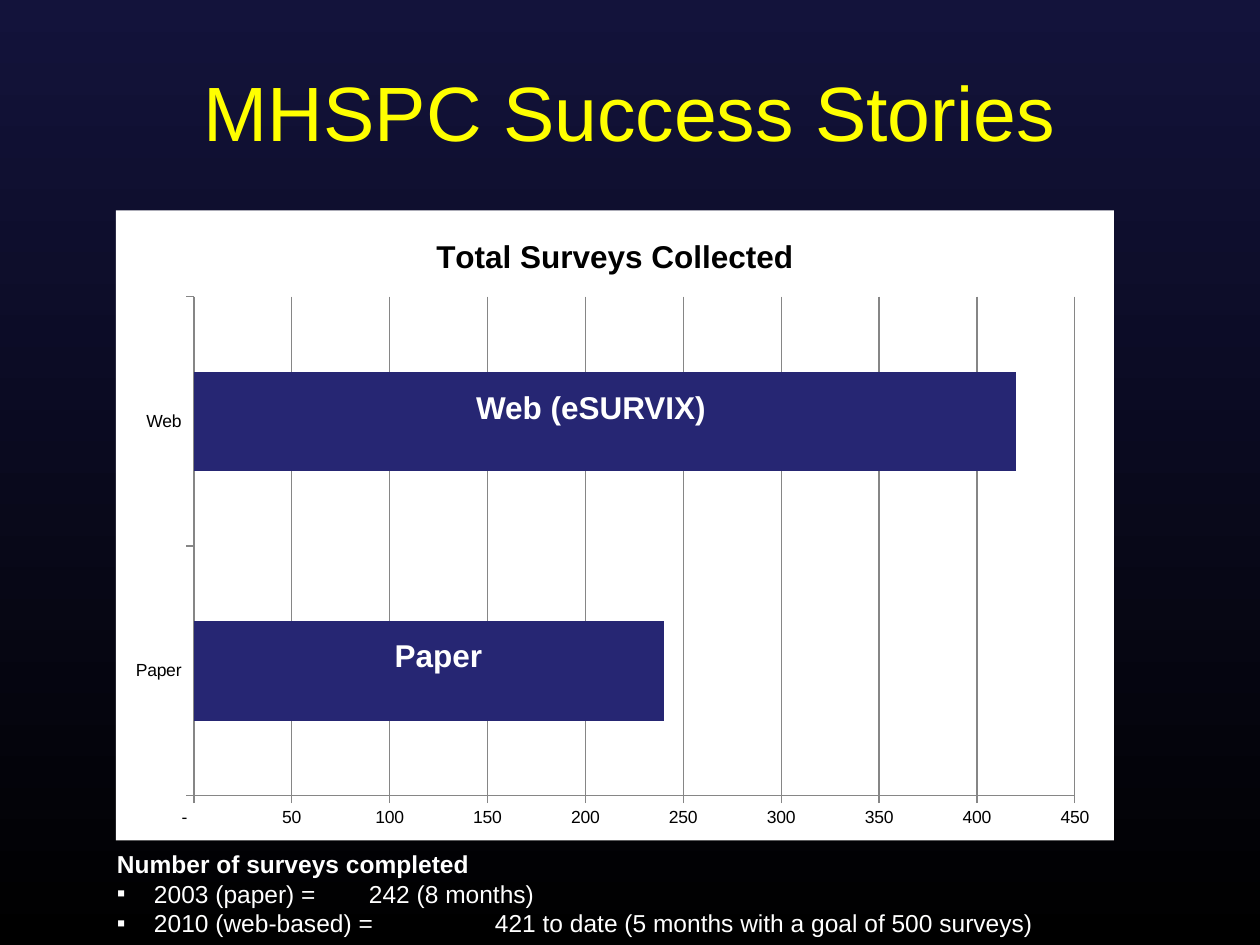
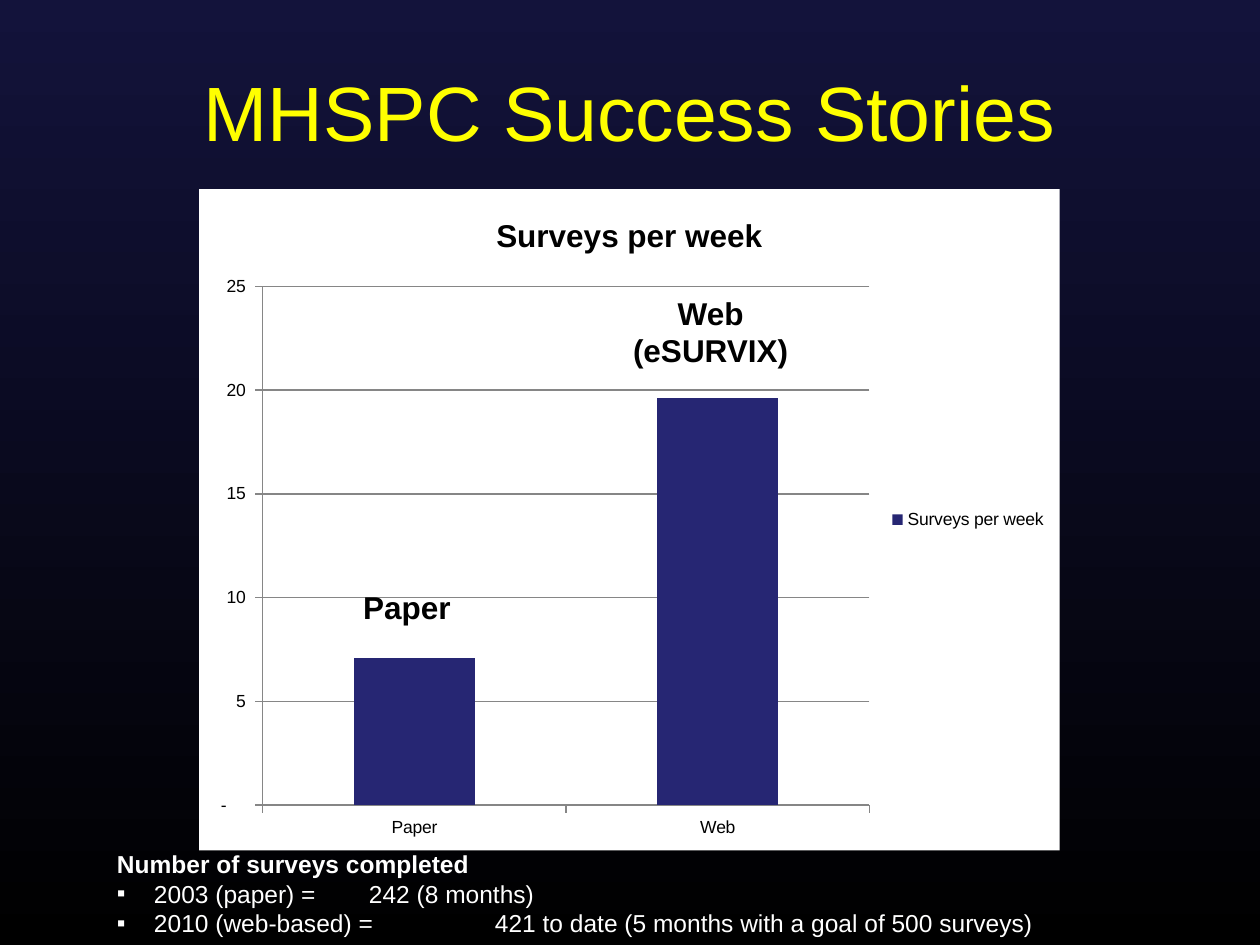
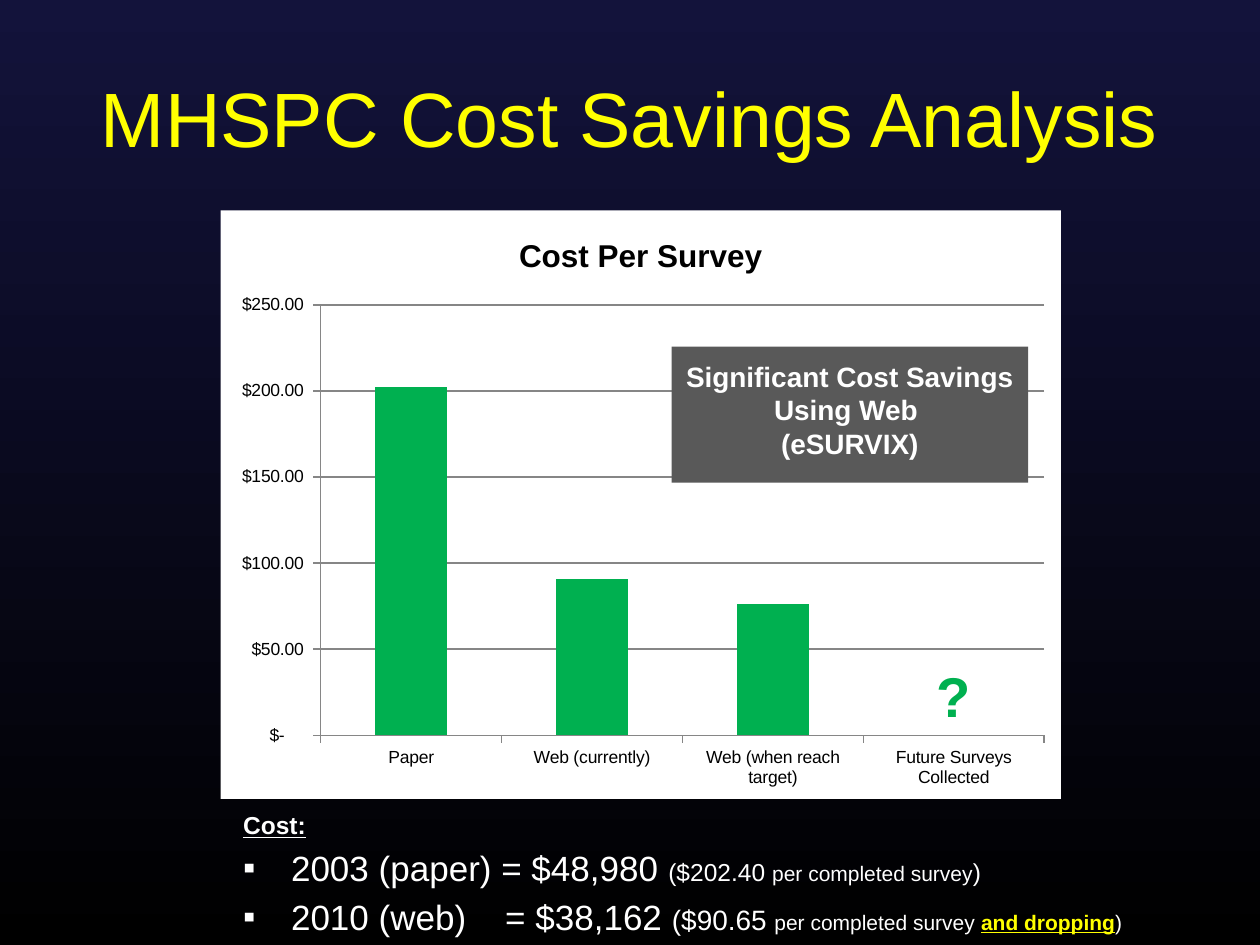
from dataclasses import dataclass
from typing import Any

from lxml import etree
from pptx import Presentation
from pptx.chart.data import CategoryChartData
from pptx.dml.color import RGBColor
from pptx.enum.chart import XL_CHART_TYPE, XL_LEGEND_POSITION, XL_TICK_MARK
from pptx.enum.shapes import MSO_SHAPE
from pptx.enum.text import MSO_ANCHOR, MSO_AUTO_SIZE, PP_ALIGN
from pptx.oxml.ns import qn
from pptx.util import Inches, Pt

BAR = XL_CHART_TYPE.BAR_CLUSTERED
COLUMN = XL_CHART_TYPE.COLUMN_CLUSTERED
RIGHT = XL_LEGEND_POSITION.RIGHT
OUT = XL_TICK_MARK.OUTSIDE
RECT = MSO_SHAPE.RECTANGLE
TOP, MIDDLE = MSO_ANCHOR.TOP, MSO_ANCHOR.MIDDLE
FIXED = MSO_AUTO_SIZE.NONE
LEFT, CENTER = PP_ALIGN.LEFT, PP_ALIGN.CENTER

FACE = "Arial"
NIGHT, BLACK, WHITE = "13133B", "000000", "FFFFFF"
YELLOW, NAVY, GREEN = "FFFF00", "262673", "00B050"
SLATE, GRAY = "595959", "868686"
COUNT = '_(* #,##0_);_(* \\(#,##0\\);_(* "-"??_);_(@_)'
MONEY = '_("$"* #,##0.00_);_("$"* \\(#,##0.00\\);_("$"* "-"??_);_(@_)'

Box = tuple[float, float, float, float]


@dataclass(frozen=True)
class Run:
    text: str
    size: float
    color: str = WHITE
    bold: bool = False
    line: bool = False


@dataclass(frozen=True)
class Para:
    runs: tuple[Run, ...]
    align: Any = LEFT
    hang: float = 0
    bullet: str = ""
    before: float = 0
    tab: float = 0


@dataclass(frozen=True)
class Label:
    lines: tuple[str, ...]
    box: Box
    color: str
    size: float = 18
    fill: str = ""
    inset: float = 0


@dataclass(frozen=True)
class Graph:
    title: str
    box: Box
    kind: Any
    cats: tuple[str, ...]
    vals: tuple[float | None, ...]
    color: str
    code: str
    top: float
    step: float
    legend: bool = False


@dataclass(frozen=True)
class Page:
    title: str
    top: float
    graph: Graph
    labels: tuple[Label, ...]
    notes: tuple[Para, ...]
    body: bool = False


def rgb(code: str) -> RGBColor:
    return RGBColor.from_string(code)


def assign(item: Any, vals: dict[str, Any]) -> None:
    for name, val in vals.items():
        setattr(item, name, val)


def place(shape: Any, box: Box) -> None:
    names = ("left", "top", "width", "height")
    assign(shape, dict(zip(names, map(Inches, box))))


def style(font: Any, size: float, color: str, bold: bool = False, line: bool = False) -> None:
    assign(font, {"name": FACE, "size": Pt(size), "bold": bold, "underline": line})
    font.color.rgb = rgb(color)


def layout(para: Any, spec: Para) -> None:
    assign(para, {"alignment": spec.align, "space_before": Pt(spec.before)})
    props = para._p.get_or_add_pPr()
    props.set("marL", str(Inches(spec.hang)))
    props.set("indent", str(Inches(-spec.hang)))
    if spec.bullet:
        etree.SubElement(props, qn("a:buFont"), typeface=FACE)
        etree.SubElement(props, qn("a:buChar"), char=spec.bullet)
    else:
        etree.SubElement(props, qn("a:buNone"))
    if spec.tab:
        tabs = etree.SubElement(props, qn("a:tabLst"))
        etree.SubElement(tabs, qn("a:tab"), pos=str(Inches(spec.tab)), algn="l")


def write(frame: Any, paras: tuple[Para, ...], **vals: Any) -> None:
    assign(frame, {"word_wrap": True, "auto_size": FIXED, **vals})
    for num, spec in enumerate(paras):
        para = frame.add_paragraph() if num else frame.paragraphs[0]
        layout(para, spec)
        for part in spec.runs:
            run = para.add_run()
            run.text = part.text
            style(run.font, part.size, part.color, part.bold, part.line)


def add_label(slide: Any, label: Label) -> None:
    box = tuple(map(Inches, label.box))
    if label.fill:
        shape = slide.shapes.add_shape(RECT, *box)
        shape.shadow.inherit = False
        shape.fill.solid()
        shape.fill.fore_color.rgb = rgb(label.fill)
        shape.line.fill.background()
    else:
        shape = slide.shapes.add_textbox(*box)
    sides = ("left", "top", "right", "bottom")
    inset = {f"margin_{side}": Inches(label.inset) for side in sides}
    paras = tuple(
        Para((Run(text, label.size, label.color, True),), CENTER)
        for text in label.lines
    )
    write(shape.text_frame, paras, vertical_anchor=TOP, **inset)


def add_graph(slide: Any, graph: Graph) -> None:
    data = CategoryChartData()
    data.categories = graph.cats
    data.add_series(graph.title, graph.vals)
    box = map(Inches, graph.box)
    chart = slide.shapes.add_chart(graph.kind, *box, data).chart
    style(chart.font, 10, BLACK)
    assign(chart, {"has_title": True, "has_legend": graph.legend})
    chart.chart_title.text_frame.text = graph.title
    head = chart.chart_title.text_frame.paragraphs[0].runs[0]
    style(head.font, 18, BLACK, True)
    if graph.legend:
        assign(chart.legend, {"position": RIGHT, "include_in_layout": False})
    props = etree.Element(qn("c:spPr"))
    fill = etree.SubElement(props, qn("a:solidFill"))
    etree.SubElement(fill, qn("a:srgbClr"), val=WHITE)
    chart.element.find(qn("c:chart")).addnext(props)

    plot = chart.plots[0]
    assign(plot, {"gap_width": 150, "vary_by_categories": False})
    bars = plot.series[0].format.fill
    bars.solid()
    bars.fore_color.rgb = rgb(graph.color)
    scale = chart.value_axis
    assign(scale, {
        "has_major_gridlines": True,
        "minimum_scale": 0,
        "maximum_scale": graph.top,
        "major_unit": graph.step,
    })
    assign(scale.tick_labels, {"number_format": graph.code, "number_format_is_linked": False})
    for axis in (chart.category_axis, scale):
        axis.major_tick_mark = OUT
    for item in (chart.category_axis, scale, scale.major_gridlines):
        item.format.line.color.rgb = rgb(GRAY)
        item.format.line.width = Pt(0.75)


def add_page(deck: Any, page: Page) -> None:
    slide = deck.slides.add_slide(deck.slide_layouts[1 if page.body else 5])
    title = slide.shapes.title
    place(title, (0.5, page.top, 9, 1.25))
    head = Para((Run(page.title, 44, YELLOW),), CENTER)
    write(title.text_frame, (head,), vertical_anchor=MIDDLE)
    add_graph(slide, page.graph)
    for label in page.labels:
        add_label(slide, label)
    if page.body:
        body = slide.placeholders[1]
        place(body, (1.83, 6.17, 7.67, 1.58))
        write(body.text_frame, page.notes, vertical_anchor=TOP, margin_top=Inches(0.26))
    else:
        body = slide.shapes.add_textbox(*map(Inches, (0.83, 6.69, 8.5, 0.81)))
        write(body.text_frame, page.notes, vertical_anchor=TOP)


def paint(deck: Any) -> None:
    fill = deck.slide_master.background.fill
    fill.gradient()
    fill.gradient_angle = 270
    for stop, color in zip(fill.gradient_stops, (NIGHT, BLACK)):
        stop.color.rgb = rgb(color)


def count(text: str, tab: float) -> Para:
    return Para((Run(text, 14),), hang=0.24, bullet="▪", tab=tab)


def cost(*runs: Run) -> Para:
    return Para(runs, hang=0.38, bullet="▪", before=4, tab=2.08)


STORY = "MHSPC Success Stories"
TOTALS = (
    Para((Run("Number of surveys completed", 14, bold=True),)),
    count(" 2003 (paper) = \t242 (8 months)", 2),
    count(" 2010 (web-based) = \t421 to date (5 months with a goal of 500 surveys)", 3),
)
COSTS = (
    Para((Run("Cost:", 14, bold=True, line=True),), hang=0.38),
    cost(
        Run("2003 (paper) = $48,980 ", 20),
        Run("($202.40 ", 14),
        Run("per completed survey", 12),
        Run(")", 14),
    ),
    cost(
        Run("2010 (web)\t= $38,162 ", 20),
        Run("($90.65 ", 16),
        Run("per completed survey ", 12),
        Run("and dropping", 12, YELLOW, True, True),
        Run(")", 12),
    ),
)
MODES = ("Paper", "Web")
PAGES = (
    Page(
        STORY, 0.25,
        Graph("Total Surveys Collected", (0.92, 1.67, 7.92, 5), BAR,
              MODES, (240, 420), NAVY, COUNT, 450, 50),
        (
            Label(("Paper",), (2.17, 5.05, 2.62, 0.36), WHITE),
            Label(("Web (eSURVIX)",), (3.38, 3.08, 2.62, 0.36), WHITE),
        ),
        TOTALS,
    ),
    Page(
        STORY, 0.25,
        Graph("Surveys per week", (1.58, 1.5, 6.83, 5.25), COLUMN,
              MODES, (7.1, 19.6), NAVY, COUNT, 25, 5, True),
        (
            Label(("Paper",), (1.92, 4.67, 2.62, 0.36), BLACK),
            Label(("Web", "(eSURVIX)"), (4.33, 2.33, 2.62, 0.53), BLACK),
        ),
        TOTALS,
    ),
    Page(
        "MHSPC Cost Savings Analysis", 0.3,
        Graph("Cost Per Survey", (1.75, 1.67, 6.67, 4.67), COLUMN,
              ("Paper", "Web (currently)", "Web (when reach target)",
               "Future Surveys Collected"),
              (202, 91, 76, None), GREEN, MONEY, 250, 50),
        (
            Label(("?",), (6.92, 5.25, 1.29, 0.58), GREEN, 32),
            Label(("Significant Cost Savings Using Web ", "(eSURVIX)"),
                  (5.33, 2.75, 2.83, 1.08), WHITE, 16, SLATE, 0.1),
        ),
        COSTS, True,
    ),
)


def main() -> None:
    deck = Presentation()
    assign(deck, {"slide_width": Inches(10), "slide_height": Inches(7.5)})
    paint(deck)
    for page in PAGES:
        add_page(deck, page)
    deck.save("out.pptx")


if __name__ == "__main__":
    main()
